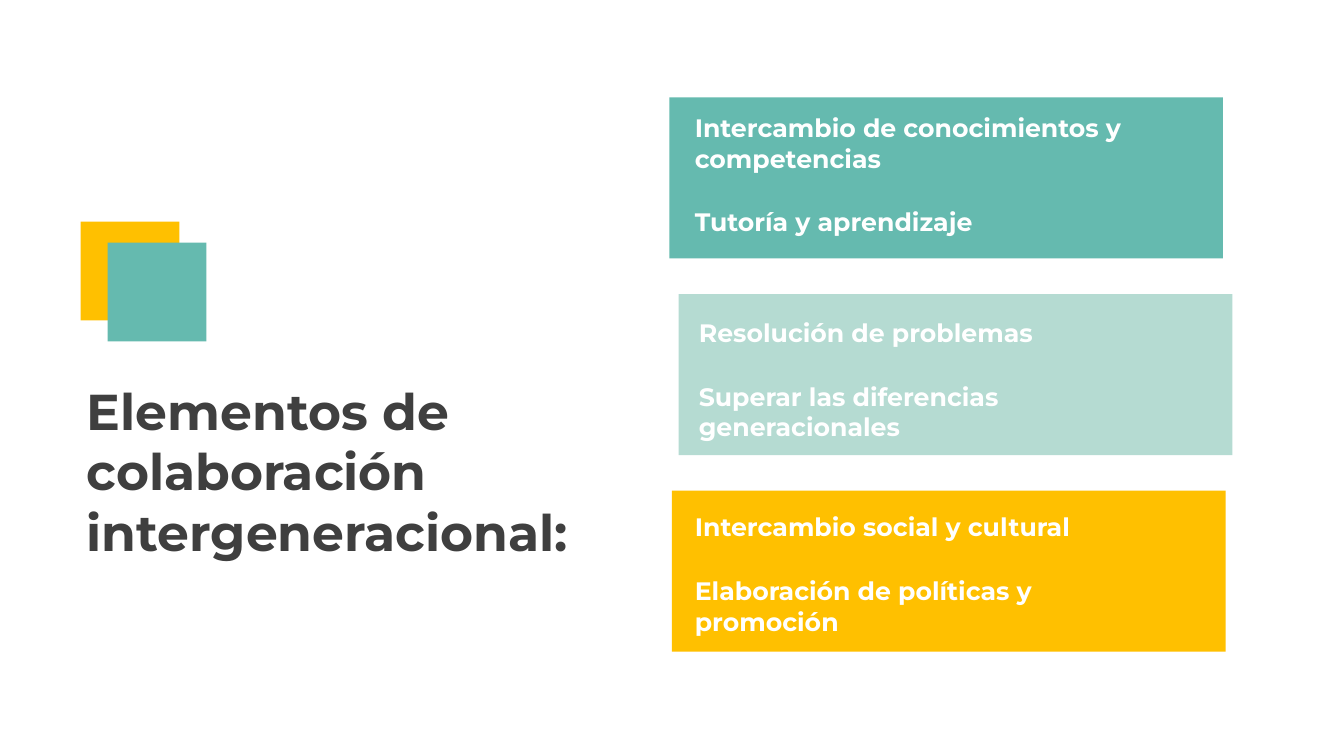
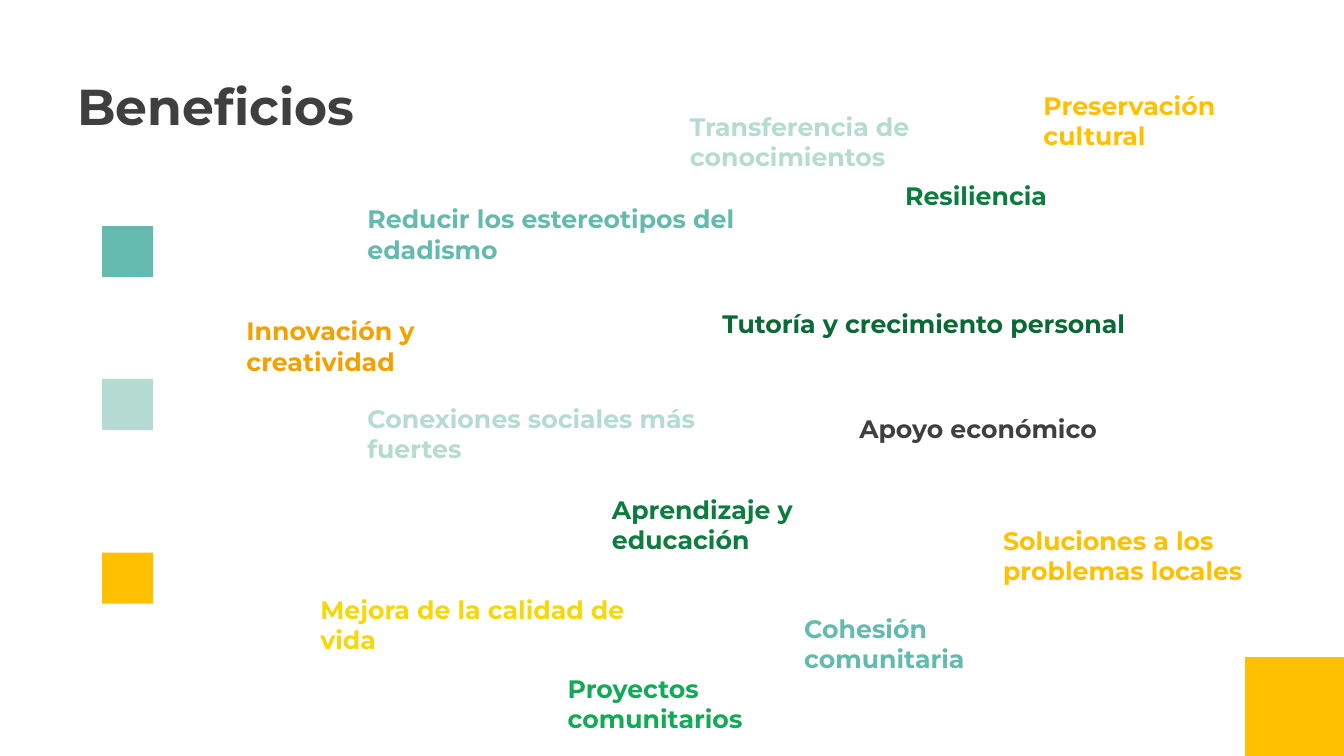
from pptx import Presentation
from pptx.dml.color import RGBColor
from pptx.enum.shapes import MSO_SHAPE as SHAPE
from pptx.enum.text import MSO_ANCHOR as ANCHOR, MSO_AUTO_SIZE as AUTO, PP_ALIGN as ALIGN
from pptx.util import Inches, Pt

FONT = "Montserrat"
WIDTH, HEIGHT = Inches(13.33), Inches(7.5)
TEAL, MINT, AMBER, INK, WHITE = "65BAAF", "B5DBD2", "FFC000", "3F3F3F", "FFFFFF"
ORANGE, YELLOW = "F2A100", "F6D80A"
PINE, FOREST, LEAF = "0B6936", "0D7D3F", "12AA57"
BIG_SQUARE, SMALL_SQUARE = 7.35, 3.8
CARD_W, CARD_H, CARD_TOP, CARD_PITCH, CARD_TEXT_W = 41.2, 21.3, 12.9, 26, 35.7

CARDS = [
    (49.8, TEAL, 1.9, 2.0, ["Intercambio de conocimientos y competencias",
                            "Tutoría y aprendizaje"]),
    (50.5, MINT, 1.5, 3.1, ["Resolución de problemas",
                            "Superar las diferencias generacionales"]),
    (50.0, AMBER, 1.7, 2.8, ["Intercambio social y cultural",
                             "Elaboración de políticas y promoción"]),
]
BENEFITS = [
    ("Transferencia de conocimientos", 50.6, 14.1, 21.2, MINT),
    ("Tutoría y crecimiento personal", 53.0, 40.1, 31.7, PINE),
    ("Reducir los estereotipos del edadismo", 26.6, 26.3, 30.2, TEAL),
    ("Conexiones sociales más fuertes", 26.6, 52.7, 28.8, MINT),
    ("Cohesión comunitaria", 59.1, 80.5, 22.6, TEAL),
    ("Innovación y creatividad", 17.6, 41.1, 23.8, ORANGE),
    ("Apoyo económico", 63.2, 54.0, 19.7, INK),
    ("Mejora de la calidad de vida", 23.1, 77.9, 25.5, YELLOW),
    ("Resiliencia", 66.6, 23.2, 13.6, FOREST),
    ("Preservación cultural", 76.9, 11.3, 21.9, AMBER),
    ("Soluciones a los problemas locales", 73.9, 68.8, 25.3, AMBER),
    ("Aprendizaje y educación", 44.8, 64.7, 22.6, FOREST),
    ("Proyectos comunitarios", 41.5, 88.4, 21.7, LEAF),
]


def rgb(value):
    """Turn a hex string into a colour."""
    return RGBColor.from_string(value)


def across(share):
    """Return a percentage of the slide's width."""
    return round(WIDTH * share / 100)


def down(share):
    """Return a percentage of the slide's height."""
    return round(HEIGHT * share / 100)


def style_text(tf, size, colour):
    """Give every paragraph of a frame the deck's bold, top-left style."""
    tf.word_wrap = True
    tf.auto_size = AUTO.NONE
    tf.vertical_anchor = ANCHOR.TOP
    for p in tf.paragraphs:
        p.alignment = ALIGN.LEFT
        for r in p.runs:
            r.font.name = FONT
            r.font.size = Pt(size)
            r.font.bold = True
            r.font.color.rgb = rgb(colour)


def add_titled_slide(prs, title, x, y, w, h):
    """Add a title-only slide and place its title."""
    s = prs.slides.add_slide(prs.slide_layouts[5])
    sp = s.shapes.title
    sp.left, sp.top, sp.width, sp.height = across(x), down(y), across(w), down(h)
    sp.text_frame.text = title
    style_text(sp.text_frame, 36, INK)
    return s


def add_block(s, left, top, width, height, colour):
    """Add a flat rectangle without outline."""
    sp = s.shapes.add_shape(SHAPE.RECTANGLE, left, top, width, height)
    sp.shadow.inherit = False
    sp.fill.solid()
    sp.fill.fore_color.rgb = rgb(colour)
    sp.line.fill.background()
    return sp


def add_square(s, x, y, side, colour):
    """Add a square whose side is a share of the slide's width."""
    add_block(s, across(x), down(y), across(side), across(side), colour)


def add_card(s, x, y, colour, inset_x, inset_y, lines):
    """Add a coloured card holding spaced white paragraphs."""
    sp = add_block(s, across(x), down(y), across(CARD_W), down(CARD_H), colour)
    tf = sp.text_frame
    tf.margin_left, tf.margin_top = across(inset_x), down(inset_y)
    tf.margin_right, tf.margin_bottom = across(CARD_W - CARD_TEXT_W - inset_x), 0
    tf.text = "\n".join(lines)
    style_text(tf, 18, WHITE)
    for p in tf.paragraphs[1:]:
        p.space_before = Pt(24)


def add_label(s, text, x, y, w, colour):
    """Add a free-standing coloured label."""
    sp = s.shapes.add_textbox(across(x), down(y), across(w), down(5.4))
    sp.text_frame.text = text
    style_text(sp.text_frame, 18, colour)


def build_elements(prs):
    """Build the slide on the elements of collaboration."""
    s = add_titled_slide(prs, "Elementos de colaboración intergeneracional:",
                         5.7, 49.6, 37.9, 25.6)
    for row, (x, colour, inset_x, inset_y, lines) in enumerate(CARDS):
        add_card(s, x, CARD_TOP + row * CARD_PITCH, colour, inset_x, inset_y, lines)
    add_square(s, 6, 29.3, BIG_SQUARE, AMBER)
    add_square(s, 8, 32.1, BIG_SQUARE, TEAL)


def build_benefits(prs):
    """Build the slide on the benefits."""
    s = add_titled_slide(prs, "Beneficios", 5, 9.2, 36.2, 9.5)
    for y, colour in ((29.9, TEAL), (50.1, MINT), (73.1, AMBER)):
        add_square(s, 7.6, y, SMALL_SQUARE, colour)
    add_square(s, 100 - BIG_SQUARE, 100 - BIG_SQUARE * WIDTH / HEIGHT, BIG_SQUARE, AMBER)
    for benefit in BENEFITS:
        add_label(s, *benefit)


def main():
    """Build and save the presentation."""
    prs = Presentation()
    prs.slide_width, prs.slide_height = WIDTH, HEIGHT
    build_elements(prs)
    build_benefits(prs)
    prs.save("out.pptx")


if __name__ == "__main__":
    main()
